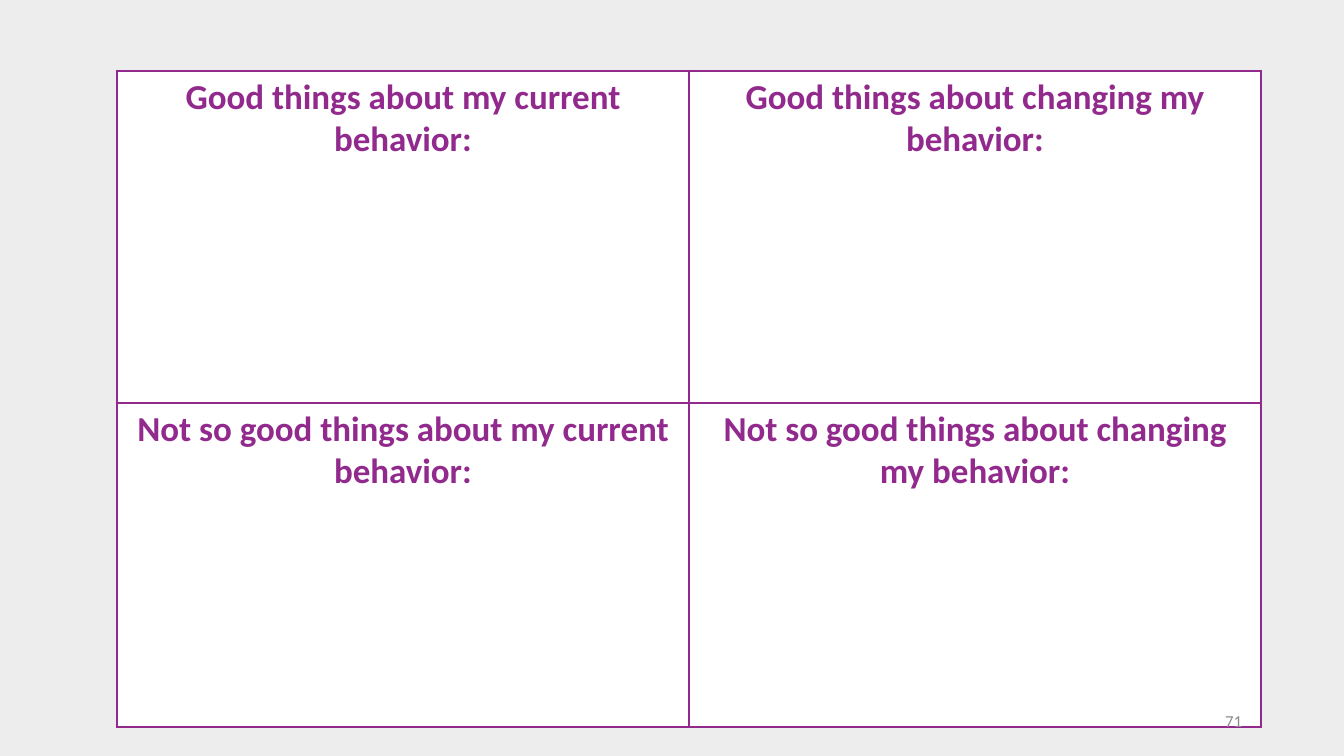
"""Build the decisional balance worksheet slide."""
from lxml import etree
from pptx import Presentation
from pptx.dml.color import RGBColor
from pptx.enum.text import MSO_ANCHOR, PP_ALIGN
from pptx.oxml.ns import qn
from pptx.util import Emu, Pt

CENTER, RIGHT = PP_ALIGN.CENTER, PP_ALIGN.RIGHT
MIDDLE, TOP = MSO_ANCHOR.MIDDLE, MSO_ANCHOR.TOP
PURPLE = RGBColor(0x92, 0x2A, 0x8E)
WHITE = RGBColor(0xFF, 0xFF, 0xFF)
PALE_GRAY = RGBColor(0xED, 0xED, 0xED)
GRAY = RGBColor(0x8C, 0x8C, 0x8C)
EMU_PER_PX = 914400 / 100.8


def px(length):
    return Emu(round(length * EMU_PER_PX))


def write(frame, text, size, color, align, bold=False, anchor=TOP):
    frame.word_wrap = True
    frame.vertical_anchor = anchor
    paragraph = frame.paragraphs[0]
    paragraph.alignment = align
    run = paragraph.add_run()
    run.text = text
    run.font.name = "Calibri"
    run.font.size = Pt(size)
    run.font.bold = bold
    run.font.color.rgb = color


prs = Presentation()
prs.slide_width, prs.slide_height = px(1344), px(756)
slide = prs.slides.add_slide(prs.slide_layouts[6])
slide.background.fill.solid()
slide.background.fill.fore_color.rgb = PALE_GRAY

QUESTIONS = [
    ["Good things about my current behavior:", "Good things about changing my behavior:"],
    ["Not so good things about my current behavior:", "Not so good things about changing my behavior:"],
]
ROW_HEIGHTS = [332, 324]
balance = slide.shapes.add_table(2, 2, px(117), px(71), px(1144), px(sum(ROW_HEIGHTS))).table
balance.first_row = balance.horz_banding = False
for column in balance.columns:
    column.width = px(572)

for row, height, questions in zip(balance.rows, ROW_HEIGHTS, QUESTIONS):
    row.height = px(height)
    for cell, question in zip(row.cells, questions):
        write(cell.text_frame, question, size=25, color=PURPLE, align=CENTER, bold=True)
        properties = cell._tc.get_or_add_tcPr()
        for side in ("a:lnL", "a:lnR", "a:lnT", "a:lnB"):
            border = etree.SubElement(properties, qn(side), w=str(Pt(2.25)))
            border_fill = etree.SubElement(border, qn("a:solidFill"))
            etree.SubElement(border_fill, qn("a:srgbClr"), val=str(PURPLE))
        cell.fill.solid()
        cell.fill.fore_color.rgb = WHITE

page_number = slide.shapes.add_textbox(px(950), px(701), px(302), px(40))
write(page_number.text_frame, "71", size=12, color=GRAY, align=RIGHT, anchor=MIDDLE)

prs.save("out.pptx")
